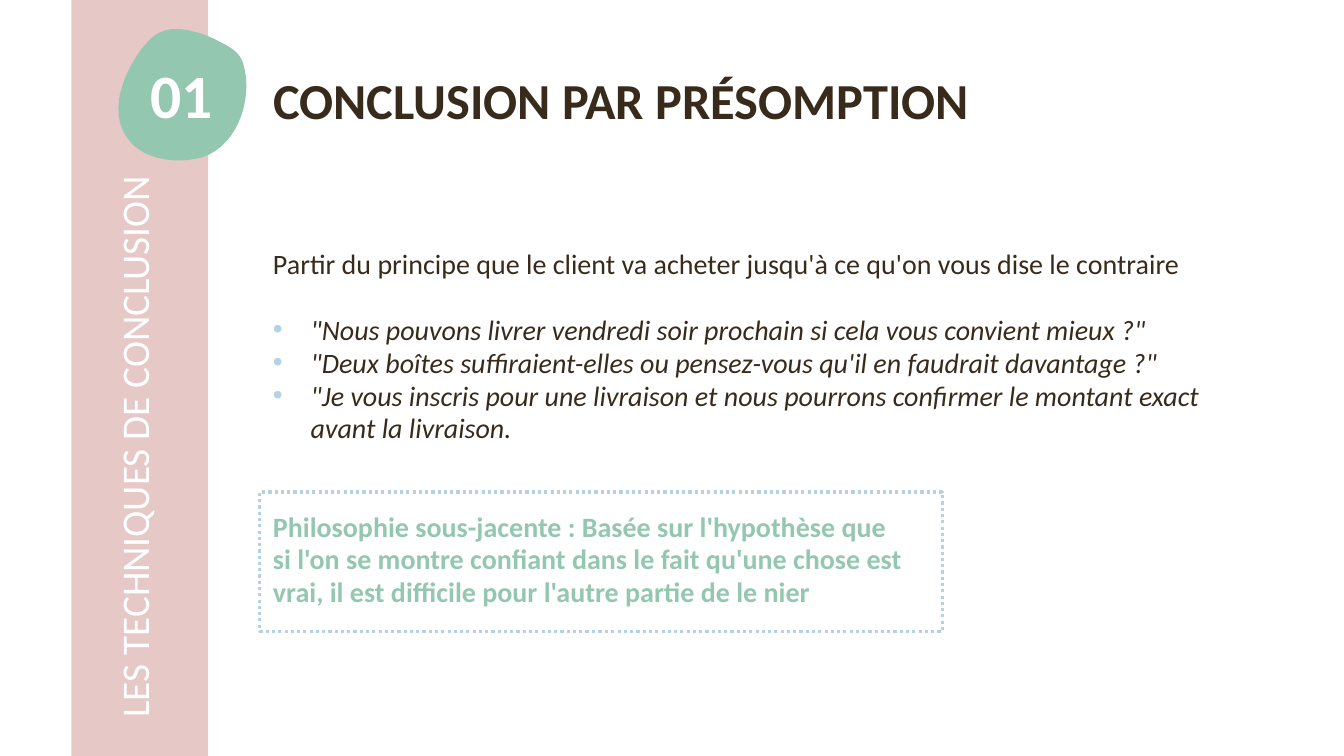
import dataclasses
import typing

import lxml.etree
import pptx
import pptx.dml.color
import pptx.enum.dml
import pptx.enum.shapes
import pptx.enum.text
import pptx.oxml.ns
import pptx.util

COLORS = {
    "brown": "382B1B",
    "green": "94C7B0",
    "blue": "B6D1E1",
    "pink": "E6C8C7",
    "white": "FFFFFF",
}
FONT = "Calibri"
LINE = 23.4
BLOB_START = (4.93, 0.81)
BLOB_CURVES = (
    ((4.5, 0.69), (4.06, 0.66), (3.71, 1.07)),
    ((3.38, 1.42), (3.07, 2.03), (3.0, 2.51)),
    ((2.84, 3.68), (3.86, 4.19), (4.9, 4.01)),
    ((5.92, 3.86), (6.43, 2.54), (6.12, 1.57)),
    ((6.02, 1.3), (5.77, 1.17), (5.51, 1.04)),
    ((5.33, 0.94), (5.13, 0.86), BLOB_START),
)
CURVE_STEPS = 16


class Area(typing.NamedTuple):
    left: float
    top: float
    width: float
    height: float

    def lengths(self) -> list[pptx.util.Length]:
        return [pptx.util.Cm(value) for value in self]


@dataclasses.dataclass(frozen=True)
class Line:
    text: str
    size: float = 20
    color: str = "brown"
    bold: bool = False
    italic: bool = False
    bullet: bool = False
    lines_before: int = 0
    spacing: pptx.util.Length | float = pptx.util.Pt(LINE)
    align: pptx.enum.text.PP_ALIGN = pptx.enum.text.PP_ALIGN.LEFT


TITLE = Line("CONCLUSION PAR PRÉSOMPTION", 36, bold=True, spacing=0.9)
CHAPTER = Line("LES TECHNIQUES DE CONCLUSION", 28, "white", spacing=0.9)
NUMBER = Line("01", 44, "white", bold=True, align=pptx.enum.text.PP_ALIGN.CENTER)
BODY = (
    Line("Partir du principe que le client va acheter jusqu'à ce qu'on vous dise le contraire"),
    Line("\"Nous pouvons livrer vendredi soir prochain si cela vous convient mieux ?\"",
         italic=True, bullet=True, lines_before=1),
    Line("\"Deux boîtes suffiraient-elles ou pensez-vous qu'il en faudrait davantage ?\"",
         italic=True, bullet=True),
    Line("\"Je vous inscris pour une livraison et nous pourrons confirmer le montant exact avant la livraison.",
         italic=True, bullet=True),
    Line("Philosophie sous-jacente : Basée sur l'hypothèse que",
         color="green", bold=True, lines_before=2),
    Line("si l'on se montre confiant dans le fait qu'une chose est", color="green", bold=True),
    Line("vrai, il est difficile pour l'autre partie de le nier", color="green", bold=True),
)


def rgb(name: str) -> pptx.dml.color.RGBColor:
    return pptx.dml.color.RGBColor.from_string(COLORS[name])


def add_bullet(para) -> None:
    qn = pptx.oxml.ns.qn
    properties = para._p.get_or_add_pPr()
    indent = pptx.util.Cm(0.95)
    properties.set("marL", str(indent))
    properties.set("indent", str(-indent))
    bullet_color = lxml.etree.SubElement(properties, qn("a:buClr"))
    lxml.etree.SubElement(bullet_color, qn("a:srgbClr"), val=COLORS["blue"])
    lxml.etree.SubElement(properties, qn("a:buFont"), typeface="Arial")
    lxml.etree.SubElement(properties, qn("a:buChar"), char="•")


def write_lines(frame, lines: typing.Sequence[Line]) -> None:
    frame.word_wrap = True
    frame.auto_size = pptx.enum.text.MSO_AUTO_SIZE.NONE
    for index, line in enumerate(lines):
        para = frame.add_paragraph() if index else frame.paragraphs[0]
        if line.bullet:
            add_bullet(para)
        para.alignment = line.align
        para.line_spacing = line.spacing
        para.space_before = pptx.util.Pt(LINE * line.lines_before)
        span = para.add_run()
        span.text = line.text
        span.font.name = FONT
        span.font.size = pptx.util.Pt(line.size)
        span.font.bold = line.bold
        span.font.italic = line.italic
        span.font.color.rgb = rgb(line.color)


def add_text(page, area: Area, lines: typing.Sequence[Line], rotation: float = 0) -> None:
    box = page.shapes.add_textbox(*area.lengths())
    box.rotation = rotation
    write_lines(box.text_frame, lines)


def fill_plain(shape, color: str) -> None:
    shape.shadow.inherit = False
    shape.fill.solid()
    shape.fill.fore_color.rgb = rgb(color)
    shape.line.fill.background()


def add_rectangle(page, area: Area):
    return page.shapes.add_shape(pptx.enum.shapes.MSO_SHAPE.RECTANGLE, *area.lengths())


def add_dotted_frame(page, area: Area) -> None:
    shape = add_rectangle(page, area)
    shape.shadow.inherit = False
    shape.fill.background()
    shape.line.color.rgb = rgb("blue")
    shape.line.width = pptx.util.Pt(2.25)
    shape.line.dash_style = pptx.enum.dml.MSO_LINE.ROUND_DOT


def blob_points() -> list[tuple[int, int]]:
    points = []
    start = BLOB_START
    for first, second, end in BLOB_CURVES:
        for step in range(1, CURVE_STEPS + 1):
            t = step / CURVE_STEPS
            u = 1 - t
            x, y = (
                pptx.util.Cm(u**3 * a + 3 * u * u * t * b + 3 * u * t * t * c + t**3 * d)
                for a, b, c, d in zip(start, first, second, end)
            )
            points.append((x, y))
        start = end
    return points


def add_blob(page) -> None:
    points = blob_points()
    builder = page.shapes.build_freeform(*points[-1])
    builder.add_line_segments(points[:-1], close=True)
    fill_plain(builder.convert_to_shape(), "green")


def add_title(page, area: Area) -> None:
    title = page.shapes.title
    title.left, title.top, title.width, title.height = area.lengths()
    title.text_frame.vertical_anchor = pptx.enum.text.MSO_ANCHOR.MIDDLE
    write_lines(title.text_frame, [TITLE])


def main() -> None:
    deck = pptx.Presentation()
    deck.slide_width = pptx.util.Cm(33.87)
    deck.slide_height = pptx.util.Cm(19.05)
    page = deck.slides.add_slide(deck.slide_layouts.get_by_name("Title Only"))
    add_title(page, Area(6.63, 1.6, 22.1, 2.01))
    add_text(page, Area(6.63, 6.12, 25.48, 12.9), BODY)
    fill_plain(add_rectangle(page, Area(1.8, 0, 3.45, 19.05)), "pink")
    add_text(page, Area(-5.11, 7.47, 18.75, 2.97), [CHAPTER], rotation=270)
    add_dotted_frame(page, Area(6.55, 12.4, 17.2, 3.51))
    add_blob(page)
    add_text(page, Area(2.97, 2.34, 3.2, 2.67), [NUMBER])
    deck.save("out.pptx")


if __name__ == "__main__":
    main()
